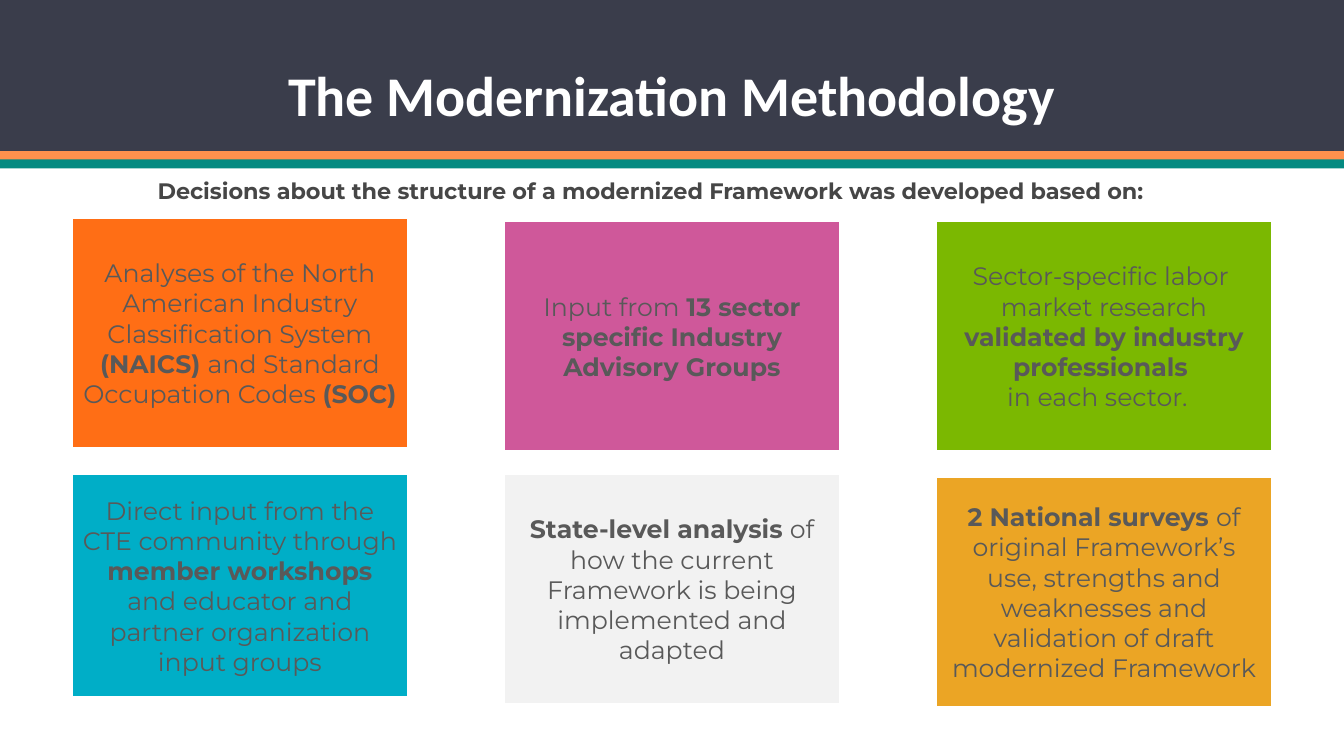
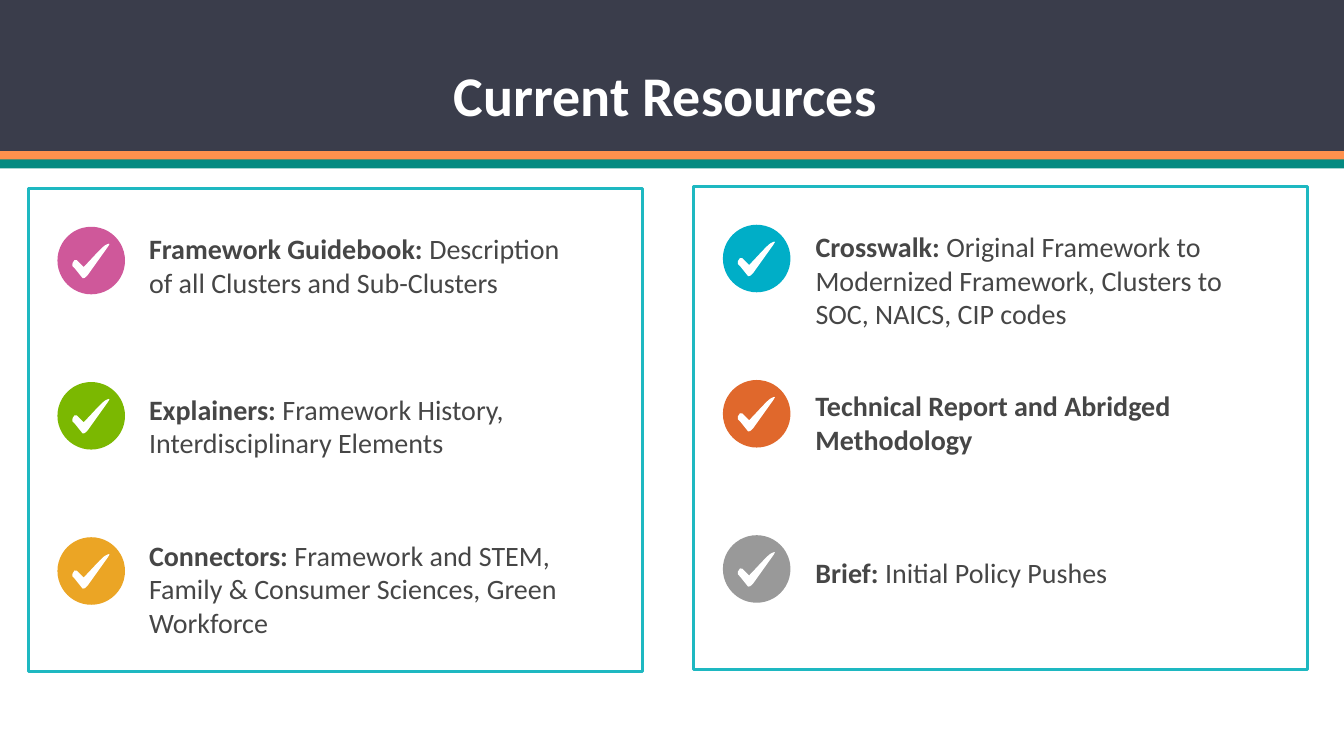
"""Build two slides on how a career framework was modernized."""
from lxml.etree import SubElement
from pptx import Presentation
from pptx.dml.color import RGBColor
from pptx.enum.shapes import MSO_SHAPE
from pptx.enum.text import MSO_ANCHOR, MSO_AUTO_SIZE, PP_ALIGN
from pptx.oxml.ns import qn
from pptx.util import Inches, Pt

WIDE, HIGH = 13.33, 7.5
HEX = {
    "navy": "3A3D4B", "coral": "FF914D", "teal": "048A81", "white": "FFFFFF",
    "ink": "464646", "gray": "595959", "frame": "1EB8C1", "orange": "FF6E15",
    "pink": "CF589A", "green": "7BB801", "blue": "00AEC7", "pale": "F2F2F2",
    "gold": "EBA525", "rust": "E0682C", "silver": "999999",
}
TYPE = {
    "title": ({"name": "Calibri", "size": Pt(40)}, "white"),
    "lead": ({"name": "Montserrat", "size": Pt(16)}, "ink"),
    "card": ({"name": "Montserrat", "size": Pt(18)}, "gray"),
    "item": ({"name": "Calibri", "size": Pt(20)}, "ink"),
}
MID = {"vertical_anchor": MSO_ANCHOR.MIDDLE, "word_wrap": True}
HEAD = MID | {"auto_size": MSO_AUTO_SIZE.NONE, "margin_left": 0,
              "margin_top": Inches(0.1), "margin_right": 0, "margin_bottom": 0}
BODY = {"word_wrap": True, "auto_size": MSO_AUTO_SIZE.SHAPE_TO_FIT_TEXT}
CENTER = {"alignment": PP_ALIGN.CENTER}
LEFT = {"alignment": PP_ALIGN.LEFT}

BANDS = [("navy", 0, 1.5), ("coral", 1.5, 0.09), ("teal", 1.58, 0.09)]
FOOT = (0, 6.5, WIDE, 1)
LEAD = ["*Decisions about the structure of a modernized Framework was developed based on:*"]
CARDS = [
    [("orange", 2.16, 2.29, ["Analyses of the North American Industry Classification System "
                             "*(NAICS) *and Standard Occupation Codes *(SOC)*"]),
     ("pink", 2.19, 2.29, ["Input from *13 sector specific Industry Advisory Groups*"]),
     ("green", 2.19, 2.29, ["Sector-specific labor ",
                            "market research *validated by industry professionals *",
                            "in each sector.  "])],
    [("blue", 4.7, 2.22, ["Direct input from the CTE community through *member workshops *"
                          "and educator and partner organization input groups"]),
     ("pale", 4.7, 2.29, ["*State-level analysis *of how the current Framework is being "
                          "implemented and adapted"]),
     ("gold", 4.73, 2.29, ["*2 National surveys *of original Framework’s use, strengths and "
                           "weaknesses and validation of draft modernized Framework"])],
]
PANELS = [
    (0.28, 1.87, 1.1, [
        ("pink", 0.38, 4.4, 0.77,
         "*Framework Guidebook: *Description of all Clusters and Sub-Clusters"),
        ("green", 1.97, 4.4, 0.77, "*Explainers: *Framework History, Interdisciplinary Elements"),
        ("gold", 3.42, 4.4, 1.11,
         "*Connectors: *Framework and STEM, Family & Consumer Sciences, Green Workforce")]),
    (6.88, 1.85, 1.11, [
        ("blue", 0.38, 4.61, 1.11, "*Crosswalk: *Original Framework to Modernized Framework, "
                                   "Clusters to SOC, NAICS, CIP codes"),
        ("rust", 1.96, 4.4, 0.77, "*Technical Report and Abridged Methodology*"),
        ("silver", 3.61, 4.4, 0.44, "*Brief: *Initial Policy Pushes")]),
]
TICK = (40, 36)
START = (34, 3)
CURVES = [
    [(31, 4), (19, 18), (12, 25)], [(7, 20)] * 3,
    [(6, 19), (5, 17), (3, 18)], [(1, 21)] * 3,
    [(0, 23), (1, 25), (3, 26)], [(11, 36)] * 3,
    [(12, 36), (14, 36), (15, 34)], [(16, 33)] * 3, [(16, 33)] * 3, [(36, 5)] * 3,
    [(37, 3), (40, 0), (34, 3)],
]


def tint(name):
    return RGBColor.from_string(HEX[name])


def apply(thing, values):
    for key, value in values.items():
        setattr(thing, key, value)


def write(frame, paras, kind, look, para):
    apply(frame, look)
    font, color = TYPE[kind]
    for num, text in enumerate(paras):
        line = frame.add_paragraph() if num else frame.paragraphs[0]
        apply(line, para)
        for part, words in enumerate(text.split("*")):
            if words:
                run = line.add_run()
                run.text = words
                apply(run.font, font | {"bold": part % 2 == 1})
                run.font.color.rgb = tint(color)


def paint(shape, fill=None, edge=None, width=0):
    shape.shadow.inherit = False
    if fill:
        shape.fill.solid()
        shape.fill.fore_color.rgb = tint(fill)
    else:
        shape.fill.background()
    if edge:
        shape.line.color.rgb = tint(edge)
        shape.line.width = Pt(width)
    else:
        shape.line.fill.background()
    return shape


def block(shapes, box, *style, form=MSO_SHAPE.RECTANGLE):
    return paint(shapes.add_shape(form, *map(Inches, box)), *style)


def label(slide, box, paras, kind, para):
    frame = slide.shapes.add_textbox(*map(Inches, box)).text_frame
    write(frame, paras, kind, BODY, para)


def tick(shapes, left, top):
    wide, high = TICK
    pen = shapes.build_freeform(0, 0, scale=Inches(0.01))
    pen.add_line_segments([(wide, 0), TICK, (0, high)])
    shape = pen.convert_to_shape(Inches(left), Inches(top))
    route = shape.element.find(".//" + qn("a:path"))
    for child in list(route):
        route.remove(child)
    route.set("w", str(wide))
    route.set("h", str(high))
    for tag, spots in [("moveTo", [START]), *(("cubicBezTo", spots) for spots in CURVES)]:
        step = SubElement(route, qn("a:" + tag))
        for x, y in spots:
            SubElement(step, qn("a:pt"), x=str(x), y=str(y))
    SubElement(route, qn("a:close"))
    paint(shape, "white")


def badge(slide, left, top, color):
    group = slide.shapes.add_group_shape().shapes
    block(group, (left, top, 0.67, 0.67), color, form=MSO_SHAPE.OVAL)
    tick(group, left + 0.14, top + 0.15)


def page(deck, title):
    slide = deck.slides.add_slide(deck.slide_layouts[5])
    head = slide.shapes.title
    apply(head, dict(zip(("left", "top", "width", "height"),
                         map(Inches, (1.63, 0.51, 10.06, 0.83)))))
    write(head.text_frame, [f"*{title}*"], "title", HEAD, CENTER | {"line_spacing": 0.9})
    return slide


def share(slide):
    layout = slide.slide_layout
    for holder in list(layout.placeholders):
        if holder.placeholder_format.idx:
            layout.shapes.element.remove(holder.element)
    bands = [block(slide.shapes, (0, top, WIDE, high), color) for color, top, high in BANDS]
    for place, band in enumerate(bands, 2):
        layout.shapes.element.insert(place, band.element)


def ground(slide):
    foot = block(slide.shapes, FOOT, "white")
    slide.shapes.element.insert(2, foot.element)


def method(deck):
    slide = page(deck, "The Modernization Methodology")
    share(slide)
    ground(slide)
    label(slide, (0.71, 1.71, 11.49, 0.91), LEAD, "lead", CENTER)
    for row in CARDS:
        for col, (color, top, high, paras) in enumerate(row):
            card = block(slide.shapes, (0.71 + 4.285 * col, top, 3.34, high), color, "white", 2)
            write(card.text_frame, paras, "card", MID, CENTER)


def assets(deck):
    slide = page(deck, "Current Resources ")
    ground(slide)
    for left, top, inset, items in PANELS:
        block(slide.shapes, (left, top, 6.09, 4.79), None, "frame", 2.25)
        for row, (color, down, wide, high, text) in enumerate(items):
            badge(slide, left + 0.29, top + 0.38 + 1.54 * row, color)
            label(slide, (left + inset, top + down, wide, high), [text], "item", LEFT)


def main():
    deck = Presentation()
    apply(deck, {"slide_width": Inches(WIDE), "slide_height": Inches(HIGH)})
    method(deck)
    assets(deck)
    deck.save("out.pptx")


if __name__ == "__main__":
    main()
